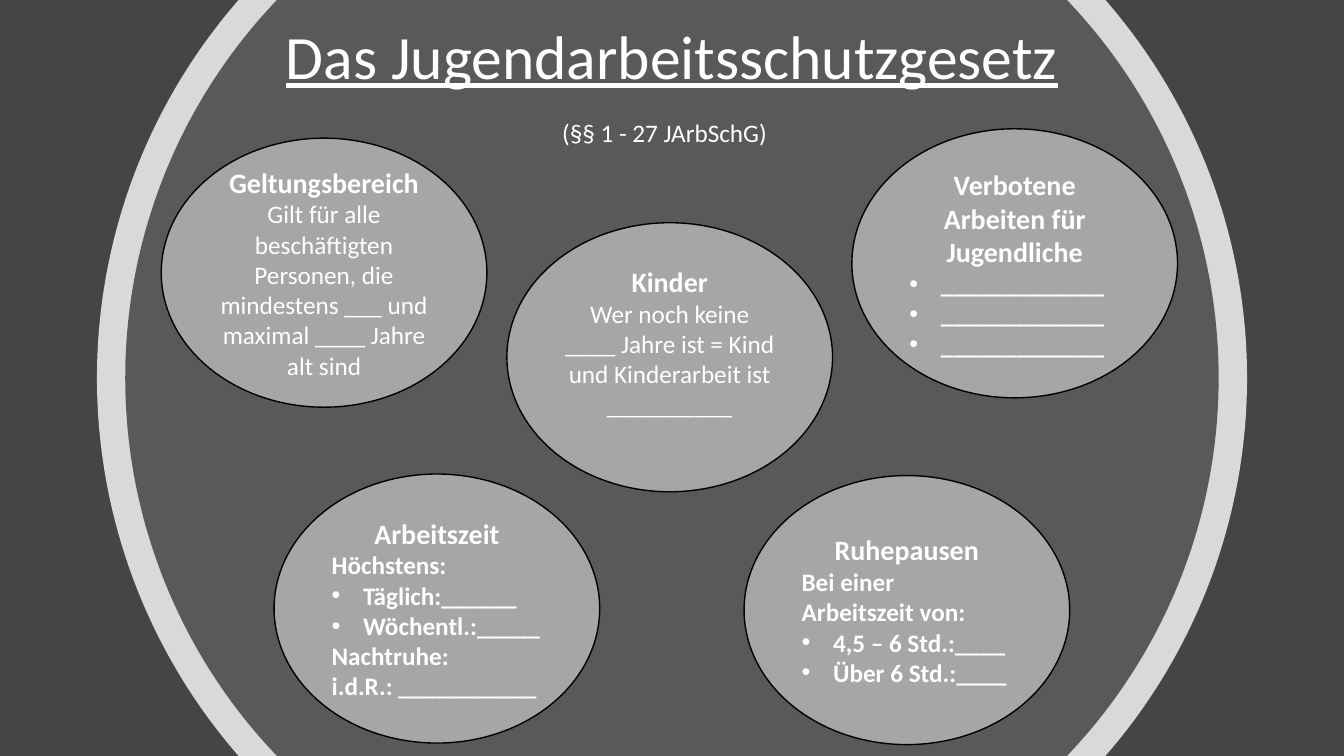
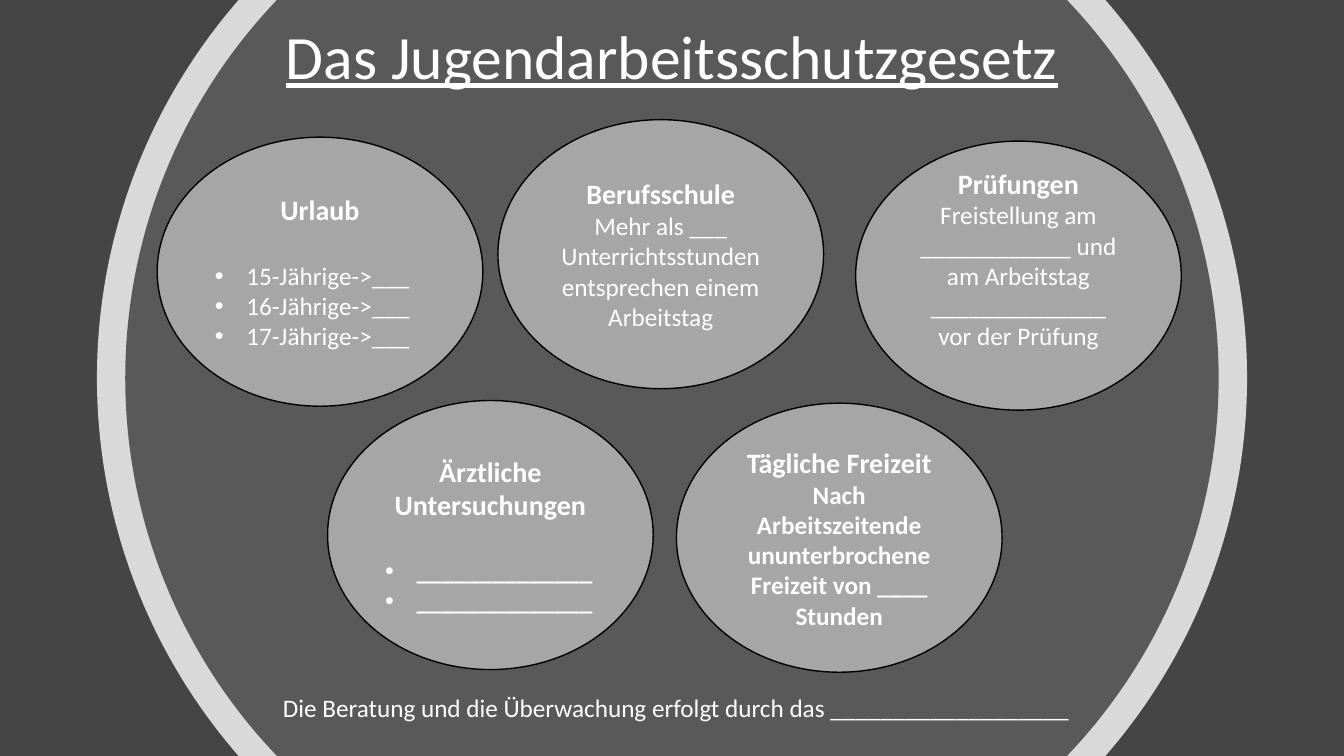
import math

import pptx
import pptx.dml.color
import pptx.enum.shapes
import pptx.enum.text
import pptx.util
from lxml import etree
from pptx.oxml.ns import qn

Pt = pptx.util.Pt
ALIGN = pptx.enum.text.PP_ALIGN
ANCHOR = pptx.enum.text.MSO_ANCHOR

COLORS = {
    "background": "454545",
    "ring": "FFFFFF",
    "disc": "595959",
    "oval": "A6A6A6",
    "outline": "000000",
    "text": "FFFFFF",
}
FONT = "Calibri"
WIDTH, HEIGHT = 960, 540
OVAL_WIDTH, OVAL_HEIGHT = 232.6, 192.2
HEADING_SIZE, BODY_SIZE = 20, 18
LINE_FACTOR = 1.22
INDENT = 22.5
TITLE = "Das Jugendarbeitsschutzgesetz"

TOPICS = [
    [
        dict(at=(115.2, 98.7), heading="Geltungsbereich", lines=[
            ("center", "Gilt für alle beschäftigten Personen, die mindestens ___ und maximal ____ Jahre alt sind")]),
        dict(at=(195.8, 338.6), heading="Arbeitszeit", bold=True, lines=[
            ("left", "Höchstens:"),
            ("bullet", "Täglich:______"),
            ("bullet", "Wöchentl.:_____"),
            ("left", "Nachtruhe:"),
            ("left", "i.d.R.: ___________")]),
        dict(at=(362.1, 159.1), heading="Kinder", space_below=BODY_SIZE, lines=[
            ("center", "Wer noch keine ____ Jahre ist = Kind und Kinderarbeit ist __________")]),
        dict(at=(608.5, 92), heading="Verbotene Arbeiten für Jugendliche", bold=True,
             lines=[("bullet", "_" * 13)] * 3),
        dict(at=(531.5, 339.7), heading="Ruhepausen", bold=True, lines=[
            ("left", "Bei einer Arbeitszeit von:"),
            ("bullet", "4,5 – 6 Std.:____"),
            ("bullet", "Über 6 Std.:____")]),
    ],
    [
        dict(at=(112.3, 98), heading="Urlaub", heading_gap=HEADING_SIZE,
             lines=[("bullet", f"{age}-Jährige->___") for age in (15, 16, 17)]),
        dict(at=(234, 286.1), heading="Ärztliche Untersuchungen", heading_gap=HEADING_SIZE,
             bold=True, lines=[("bullet", "_" * 14)] * 2),
        dict(at=(355.7, 85.5), heading="Berufsschule", lines=[
            ("center", "Mehr als ___ Unterrichtsstunden entsprechen einem Arbeitstag")]),
        dict(at=(611.2, 100.8), heading="Prüfungen", space_below=HEADING_SIZE, lines=[
            ("center", "Freistellung am ____________ und am Arbeitstag ______________ vor der Prüfung")]),
        dict(at=(483.2, 288), heading="Tägliche Freizeit", bold=True, lines=[
            ("center", "Nach Arbeitszeitende ununterbrochene Freizeit von ____ Stunden")]),
    ],
]
NOTES = [
    ("(§§ 1 - 27 JArbSchG)", (394.5, 80.5, 168, 29)),
    ("Die Beratung und die Überwachung erfolgt durch das ___________________", (195, 491, 583, 29)),
]


def color(name):
    """Return a named colour."""
    return pptx.dml.color.RGBColor.from_string(COLORS[name])


def paint(shape, fill, line=None):
    """Give a shape a flat fill and an optional thin outline."""
    shape.shadow.inherit = False
    shape.fill.solid()
    shape.fill.fore_color.rgb = color(fill)
    if line:
        shape.line.color.rgb = color(line)
        shape.line.width = Pt(1)
    else:
        shape.line.fill.background()


def add_span(para, text, size, bold=False, underline=False):
    """Add one run of text."""
    span = para.add_run()
    span.text = text
    font = span.font
    font.name, font.size = FONT, Pt(size)
    font.bold, font.underline = bold, underline
    font.color.rgb = color("text")


def set_bullet(para):
    """Turn a paragraph into a hanging bullet item."""
    properties = para._p.get_or_add_pPr()
    properties.set("marL", str(Pt(INDENT)))
    properties.set("indent", str(-Pt(INDENT)))
    etree.SubElement(properties, qn("a:buFont")).set("typeface", "Arial")
    etree.SubElement(properties, qn("a:buChar")).set("char", "•")


def bend(segment, controls):
    """Turn a straight outline segment into a cubic curve."""
    segment.tag = qn("a:cubicBezTo")
    for position, (x, y) in enumerate(controls):
        point = etree.Element(qn("a:pt"), x=str(x), y=str(y))
        segment.insert(position, point)


def add_disc(page, radius, fill, opacity=100):
    """Draw a centred disc cut off at the slide's top and bottom."""
    limit = math.asin(HEIGHT / 2 / radius)
    handle = 4 / 3 * math.tan(limit / 4)
    angles = [middle + turn for middle in (0, math.pi) for turn in (-limit, 0, limit)]

    def spot(angle, reach=0):
        """Return the rim point moved along its tangent."""
        x = math.cos(angle) - reach * math.sin(angle)
        y = math.sin(angle) + reach * math.cos(angle)
        return Pt(WIDTH / 2 + radius * x), Pt(HEIGHT / 2 + radius * y)

    points = [spot(angle) for angle in angles]
    builder = page.shapes.build_freeform(*points[0])
    builder.add_line_segments(points[1:], close=True)
    disc = builder.convert_to_shape()
    segments = list(disc._element.iter(qn("a:lnTo")))
    for index in (0, 1, 3, 4):
        controls = spot(angles[index], handle), spot(angles[index + 1], -handle)
        bend(segments[index], [(x - disc.left, y - disc.top) for x, y in controls])
    paint(disc, fill)
    if opacity < 100:
        tint = disc.fill._xPr.find(qn("a:solidFill"))[0]
        etree.SubElement(tint, qn("a:alpha")).set("val", str(opacity * 1000))


def add_label(page, box, text, size, underline=False):
    """Place a text box with one line and return it."""
    label = page.shapes.add_textbox(*map(Pt, box))
    label.text_frame.word_wrap = True
    add_span(label.text_frame.paragraphs[0], text, size, underline=underline)
    return label


def add_title(page, box):
    """Place the underlined title in its box."""
    frame = add_label(page, box, TITLE, 44, underline=True).text_frame
    frame.vertical_anchor = ANCHOR.MIDDLE
    para = frame.paragraphs[0]
    para.alignment = ALIGN.CENTER
    para.line_spacing = 0.9


def add_topic(page, at, heading, lines, bold=False, heading_gap=0, space_below=0):
    """Place an oval with a heading and its lines."""
    box = (*at, OVAL_WIDTH, OVAL_HEIGHT)
    oval = page.shapes.add_shape(pptx.enum.shapes.MSO_SHAPE.OVAL, *map(Pt, box))
    paint(oval, "oval", "outline")
    frame = oval.text_frame
    frame.word_wrap = True
    frame.vertical_anchor = ANCHOR.MIDDLE
    frame.margin_bottom = Pt(3.6 + space_below * LINE_FACTOR)
    para = frame.paragraphs[0]
    para.alignment = ALIGN.CENTER
    if heading_gap:
        para.space_after = Pt(heading_gap * LINE_FACTOR)
    add_span(para, heading, HEADING_SIZE, bold=True)
    for style, text in lines:
        para = frame.add_paragraph()
        para.alignment = ALIGN.CENTER if style == "center" else ALIGN.LEFT
        if style == "bullet":
            set_bullet(para)
        add_span(para, text, BODY_SIZE, bold)


def add_page(deck, topics, note):
    """Build one slide with its discs, title, ovals and note."""
    page = deck.slides.add_slide(deck.slide_layouts[6])
    page.background.fill.solid()
    page.background.fill.fore_color.rgb = color("background")
    add_disc(page, 410.75, "ring", opacity=80)
    add_disc(page, 390.5, "disc")
    add_title(page, (182, 5, 596, 75))
    for topic in topics:
        add_topic(page, **topic)
    text, box = note
    add_label(page, box, text, BODY_SIZE)


def main():
    """Build and save the deck."""
    deck = pptx.Presentation()
    deck.slide_width, deck.slide_height = Pt(WIDTH), Pt(HEIGHT)
    for topics, note in zip(TOPICS, NOTES):
        add_page(deck, topics, note)
    deck.save("out.pptx")


if __name__ == "__main__":
    main()
